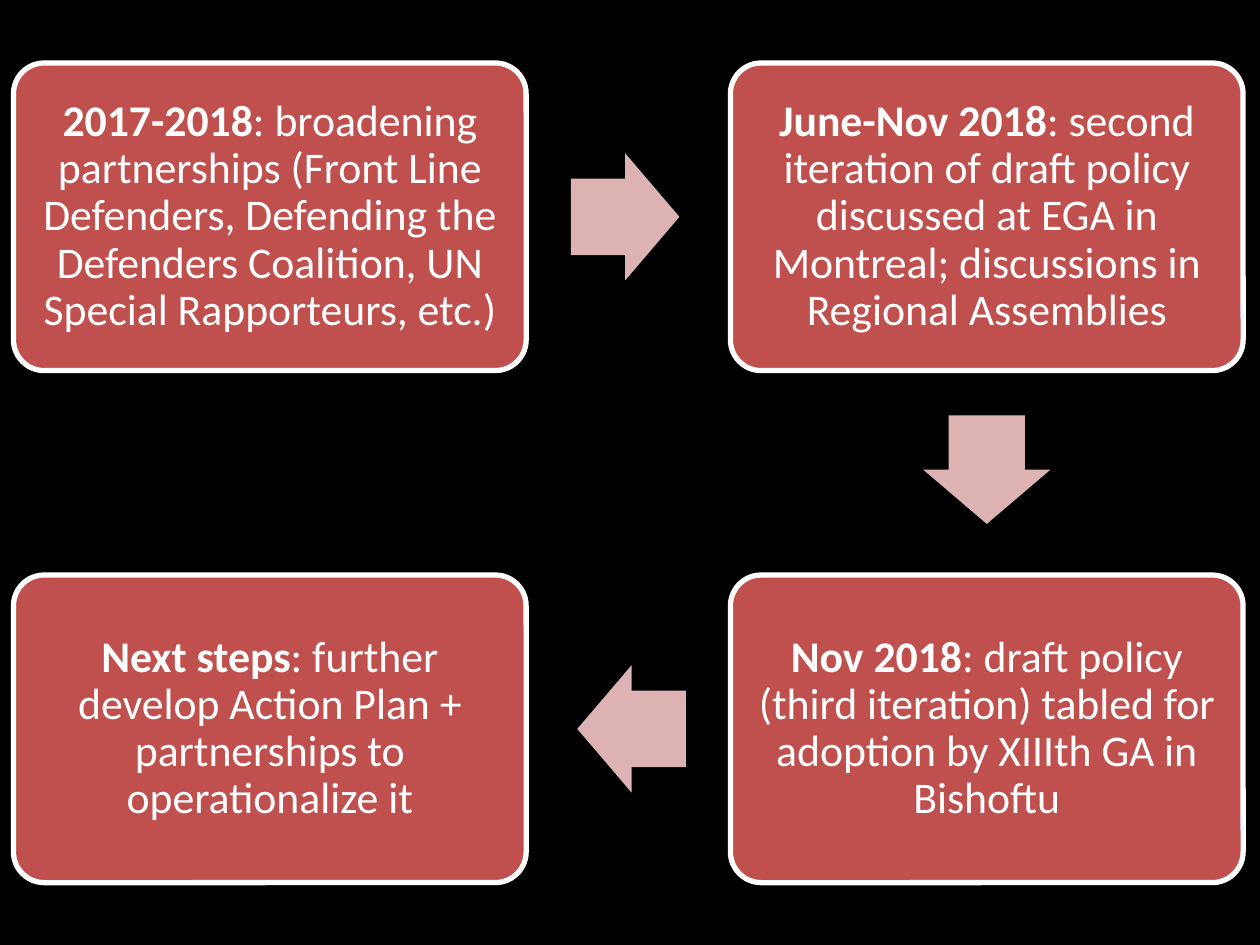
from dataclasses import dataclass
from math import atan2, cos, degrees, sin

from pptx import Presentation
from pptx.dml.color import RGBColor
from pptx.enum.shapes import MSO_SHAPE
from pptx.enum.text import MSO_ANCHOR, PP_ALIGN
from pptx.slide import Slide
from pptx.util import Pt


@dataclass(frozen=True)
class Theme:
    background: RGBColor = RGBColor(0x00, 0x00, 0x00)
    box: RGBColor = RGBColor(0xC0, 0x50, 0x4D)
    arrow: RGBColor = RGBColor(0xDC, 0xB3, 0xB2)
    light: RGBColor = RGBColor(0xFF, 0xFF, 0xFF)
    font: str = "Calibri"
    text_size: float = 25


@dataclass(frozen=True)
class Step:
    column: int
    row: int
    heading: str
    detail: str

    @property
    def left(self) -> float:
        return GRID_LEFT + self.column * COLUMN_PITCH

    @property
    def top(self) -> float:
        return GRID_TOP + self.row * ROW_PITCH


THEME = Theme()
GRID_LEFT, GRID_TOP = 7.7, 36
COLUMN_PITCH, ROW_PITCH = 409.7, 292.6
BOX_WIDTH, BOX_HEIGHT = 293, 175.8
ARROW_LENGTH, ARROW_WIDTH = 62, 72.7
ARROW_SETBACK = 1.8
INSET = 7.5

STEPS = [
    Step(0, 0, "2017-2018", ": broadening partnerships (Front Line Defenders, "
         "Defending the Defenders Coalition, UN Special Rapporteurs, etc.)"),
    Step(1, 0, "June-Nov 2018", ": second iteration of draft policy discussed "
         "at EGA in Montreal; discussions in Regional Assemblies"),
    Step(1, 1, "Nov 2018", ": draft policy (third iteration) tabled for "
         "adoption by XIIIth GA in Bishoftu"),
    Step(0, 1, "Next steps", ": further develop Action Plan + partnerships to "
         "operationalize it"),
]


def draw_step(slide: Slide, step: Step) -> None:
    shape = slide.shapes.add_shape(
        MSO_SHAPE.ROUNDED_RECTANGLE,
        Pt(step.left), Pt(step.top), Pt(BOX_WIDTH), Pt(BOX_HEIGHT))
    shape.adjustments[0] = 0.1
    shape.shadow.inherit = False
    shape.fill.solid()
    shape.fill.fore_color.rgb = THEME.box
    shape.line.color.rgb = THEME.light
    shape.line.width = Pt(3)

    frame = shape.text_frame
    frame.word_wrap = True
    frame.vertical_anchor = MSO_ANCHOR.MIDDLE
    frame.margin_left = frame.margin_right = Pt(INSET)
    frame.margin_top = frame.margin_bottom = Pt(INSET)
    paragraph = frame.paragraphs[0]
    paragraph.alignment = PP_ALIGN.CENTER
    paragraph.line_spacing = 0.9
    paragraph.font.name = THEME.font
    paragraph.font.size = Pt(THEME.text_size)
    paragraph.font.color.rgb = THEME.light
    heading = paragraph.add_run()
    heading.text = step.heading
    heading.font.bold = True
    paragraph.add_run().text = step.detail


def draw_arrow(slide: Slide, start: Step, end: Step) -> None:
    angle = atan2(end.top - start.top, end.left - start.left)
    center_x = (start.left + end.left + BOX_WIDTH) / 2 - ARROW_SETBACK * cos(angle)
    center_y = (start.top + end.top + BOX_HEIGHT) / 2 - ARROW_SETBACK * sin(angle)
    shape = slide.shapes.add_shape(
        MSO_SHAPE.RIGHT_ARROW,
        Pt(center_x - ARROW_LENGTH / 2), Pt(center_y - ARROW_WIDTH / 2),
        Pt(ARROW_LENGTH), Pt(ARROW_WIDTH))
    shape.adjustments[0] = 0.6
    shape.adjustments[1] = 0.5
    shape.rotation = degrees(angle)
    shape.shadow.inherit = False
    shape.fill.solid()
    shape.fill.fore_color.rgb = THEME.arrow
    shape.line.fill.background()


def main() -> None:
    presentation = Presentation()
    presentation.slide_width, presentation.slide_height = Pt(720), Pt(540)
    slide = presentation.slides.add_slide(presentation.slide_layouts[6])
    slide.background.fill.solid()
    slide.background.fill.fore_color.rgb = THEME.background
    for step in STEPS:
        draw_step(slide, step)
    for start, end in zip(STEPS, STEPS[1:]):
        draw_arrow(slide, start, end)
    presentation.save("out.pptx")


if __name__ == "__main__":
    main()
